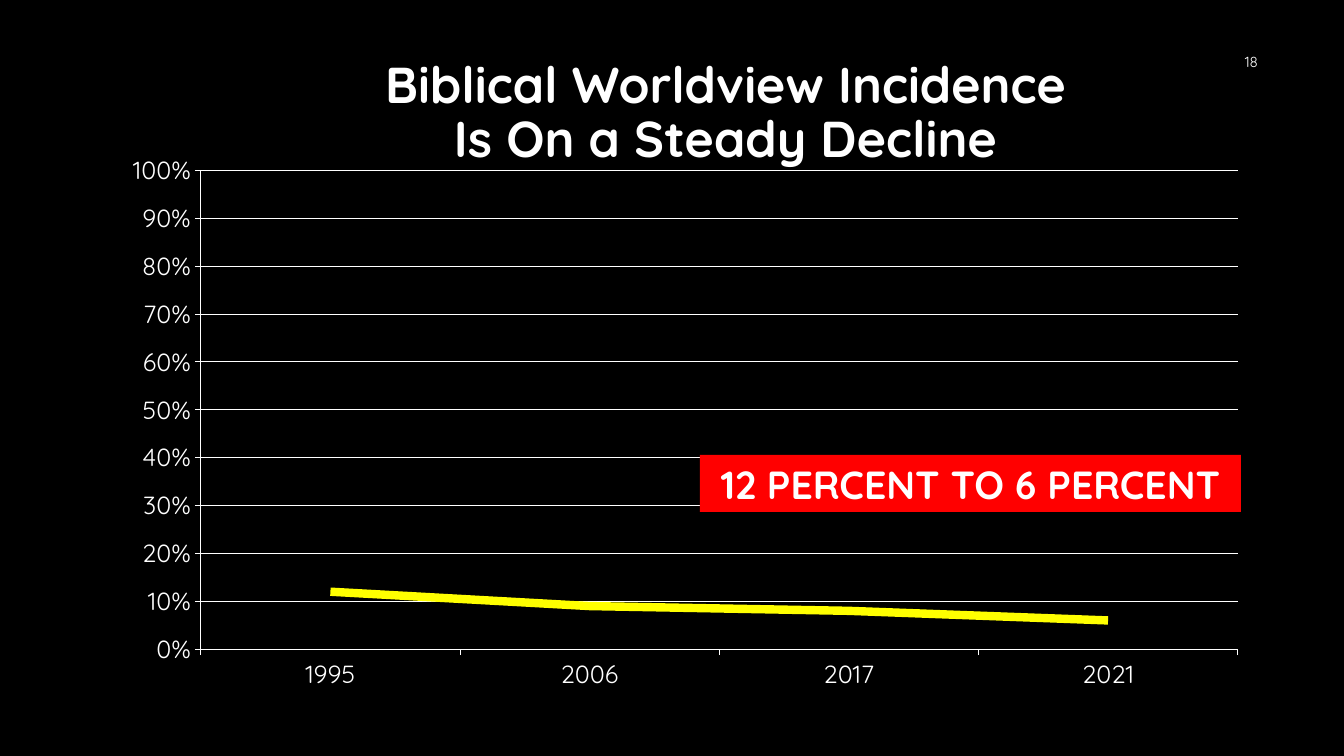
import copy
import pptx
import pptx.chart.data
import pptx.dml.color
import pptx.enum.chart
import pptx.enum.shapes
import pptx.enum.text
import pptx.oxml
import pptx.oxml.ns
import pptx.util

TITLE = "Biblical Worldview Incidence\vIs On a Steady Decline"
CALLOUT = "12 PERCENT TO 6 PERCENT"
NUMBER = "18"
INCIDENCE = {"1995": 0.12, "2006": 0.09, "2017": 0.08, "2021": 0.06}
PLOT = {"x": 0.118, "y": 0.012, "w": 0.857, "h": 0.885}

FONT = "Quicksand"
COLORS = {"background": "000000", "text": "FFFFFF", "trend": "FFFF00", "callout": "FF0000"}
BOXES = {
    "title": (324, 51, 803, 126),
    "chart": (58, 155, 1210, 550),
    "number": (966, 42, 302, 40),
    "callout": (700, 455, 541, 57),
}
EMU_PER_PX = 914400 / 100.8

ALIGN = pptx.enum.text.PP_ALIGN
ANCHOR = pptx.enum.text.MSO_ANCHOR


def px(n):
    return pptx.util.Emu(round(n * EMU_PER_PX))


def box(name):
    return [px(n) for n in BOXES[name]]


def rgb(name):
    return pptx.dml.color.RGBColor.from_string(COLORS[name])


def write(sp, text, size, bold=False, align=ALIGN.CENTER, anchor=ANCHOR.MIDDLE, spacing=None):
    tf = sp.text_frame
    tf.word_wrap = True
    tf.auto_size = pptx.enum.text.MSO_AUTO_SIZE.NONE
    tf.vertical_anchor = anchor
    p = tf.paragraphs[0]
    p.text = text
    p.alignment = align
    p.line_spacing = spacing
    for r in p.runs:
        r.font.name = FONT
        r.font.size = pptx.util.Pt(size)
        r.font.bold = bold
        r.font.color.rgb = rgb("text")
    for br in p._p.findall(pptx.oxml.ns.qn("a:br")):
        br.append(copy.deepcopy(p.runs[0]._r.rPr))


def place_plot(chart):
    area = chart._chartSpace.chart.plotArea
    for old in area.findall(pptx.oxml.ns.qn("c:layout")):
        area.remove(old)
    modes = "".join(f'<c:{k}Mode val="edge"/>' for k in "xy")
    sizes = "".join(f'<c:{k} val="{v}"/>' for k, v in PLOT.items())
    area.insert(0, pptx.oxml.parse_xml(
        f'<c:layout {pptx.oxml.ns.nsdecls("c")}><c:manualLayout>'
        f'<c:layoutTarget val="inner"/>{modes}{sizes}</c:manualLayout></c:layout>'))


def style_line(line, color, width):
    line.color.rgb = rgb(color)
    line.width = pptx.util.Pt(width)


def add_trend(s):
    data = pptx.chart.data.CategoryChartData(number_format="0%")
    data.categories = list(INCIDENCE)
    data.add_series("Series 1", list(INCIDENCE.values()))
    chart = s.shapes.add_chart(pptx.enum.chart.XL_CHART_TYPE.LINE, *box("chart"), data).chart
    chart.has_legend = False
    chart.has_title = False
    chart.font.name = FONT
    chart.font.size = pptx.util.Pt(18)
    chart.font.color.rgb = rgb("text")
    for axis in (chart.category_axis, chart.value_axis):
        axis.major_tick_mark = pptx.enum.chart.XL_TICK_MARK.OUTSIDE
        axis.minor_tick_mark = pptx.enum.chart.XL_TICK_MARK.NONE
        style_line(axis.format.line, "text", 0.75)
    values = chart.value_axis
    values.minimum_scale, values.maximum_scale, values.major_unit = 0, 1, 0.1
    values.tick_labels.number_format = "0%"
    values.tick_labels.number_format_is_linked = False
    values.has_major_gridlines = True
    style_line(values.major_gridlines.format.line, "text", 0.75)
    chart.plots[0].vary_by_categories = False
    trend = chart.plots[0].series[0]
    trend.smooth = False
    trend.marker.style = pptx.enum.chart.XL_MARKER_STYLE.NONE
    style_line(trend.format.line, "trend", 6)
    place_plot(chart)


def main():
    prs = pptx.Presentation()
    prs.slide_width, prs.slide_height = px(1344), px(756)
    s = prs.slides.add_slide(prs.slide_layouts[5])
    s.background.fill.solid()
    s.background.fill.fore_color.rgb = rgb("background")

    title = s.shapes.title
    title.left, title.top, title.width, title.height = box("title")
    write(title, TITLE, 36, bold=True, spacing=0.9)

    add_trend(s)
    write(s.shapes.add_textbox(*box("number")), NUMBER, 10.5, align=ALIGN.RIGHT)

    sp = s.shapes.add_shape(pptx.enum.shapes.MSO_SHAPE.RECTANGLE, *box("callout"))
    sp.shadow.inherit = False
    sp.fill.solid()
    sp.fill.fore_color.rgb = rgb("callout")
    sp.line.fill.background()
    write(sp, CALLOUT, 28, bold=True, anchor=ANCHOR.TOP)

    prs.save("out.pptx")


if __name__ == "__main__":
    main()
